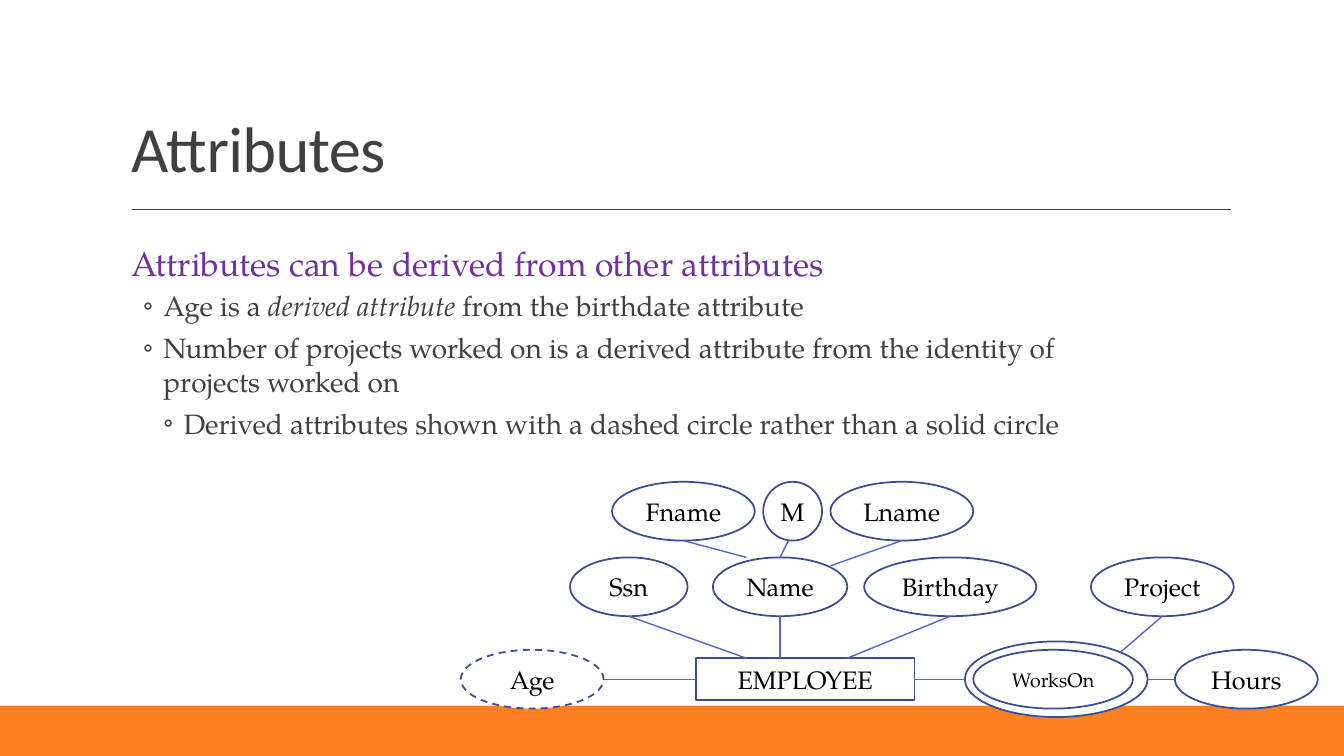
from lxml.etree import SubElement
from pptx import Presentation
from pptx.dml.color import RGBColor
from pptx.enum.dml import MSO_LINE
from pptx.enum.shapes import MSO_CONNECTOR, MSO_SHAPE
from pptx.enum.text import MSO_ANCHOR, MSO_AUTO_SIZE, PP_ALIGN
from pptx.oxml.ns import qn
from pptx.util import Inches, Pt

COLORS = {"band": "FF8021", "text": "404040", "lead": "7030A0", "node": "FFFFFF",
          "outline": "3A4C94", "link": "4E67C8", "label": "000000"}
HEAD_FONT, BODY_FONT = "Calibri", "TeX Gyre Pagella"

# The diagram sits on a grid of twelfths of an inch.
UNIT = 1 / 12
LEFT, TOP = 4.57, 4.78

# label: (column, row, columns wide)
ATTRIBUTES = {
    "Ssn": (13, 9, 14), "Birthday": (48, 9, 20.5), "Name": (30, 9, 16),
    "Fname": (18, 0, 17), "Lname": (44, 0, 17), "M": (36, 0, 7),
    "Project": (75, 9, 17), "Hours": (85, 20, 17), "Age": (0, 20, 17),
}
LINKS = [
    ((20, 16), (34, 21)), ((38, 16), (38, 21)), ((58.25, 16), (46, 21)),
    ((26.5, 7), (34, 9)), ((39, 7), (38, 9)), ((52.5, 7), (44, 10)),
    ((60, 23.5), (54, 23.5)), ((83.5, 16), (78.5, 20.3)),
    ((81.75, 23.5), (85, 23.5)), ((17, 23.5), (28, 23.5)),
]
# (level, runs as (text, italic))
BODY = [
    (0, [("Attributes can be derived from other attributes", False)]),
    (1, [("Age is a ", False), ("derived attribute", True),
         (" from the birthdate attribute", False)]),
    (1, [("Number of projects worked on is a derived attribute "
          "from the identity of projects worked on", False)]),
    (2, [("Derived attributes shown with a dashed circle "
          "rather than a solid circle", False)]),
]


def rgb(name):
    return RGBColor.from_string(COLORS[name])


def grid_x(col):
    return Inches(LEFT + col * UNIT)


def grid_y(row):
    return Inches(TOP + row * UNIT)


def add_run(p, text, size, color, font=BODY_FONT, italic=False):
    r = p.add_run()
    r.text = text
    r.font.name, r.font.size, r.font.italic = font, Pt(size), italic
    r.font.color.rgb = rgb(color)
    return r


def place(sp, left, top, width, height):
    sp.left, sp.top = Inches(left), Inches(top)
    sp.width, sp.height = Inches(width), Inches(height)


def add_line(slide, x1, y1, x2, y2, color):
    line = slide.shapes.add_connector(MSO_CONNECTOR.STRAIGHT, x1, y1, x2, y2)
    line.line.color.rgb, line.line.width = rgb(color), Pt(1)
    SubElement(line._element.spPr, qn("a:effectLst"))


def add_node(slide, label, col, row, cols, rows=7, kind=MSO_SHAPE.OVAL, size=18):
    sp = slide.shapes.add_shape(kind, grid_x(col), grid_y(row),
                                Inches(cols * UNIT), Inches(rows * UNIT))
    sp.shadow.inherit = False
    sp.fill.solid()
    sp.fill.fore_color.rgb = rgb("node")
    sp.line.color.rgb, sp.line.width = rgb("outline"), Pt(1.25)
    if label:
        tf = sp.text_frame
        tf.word_wrap = False
        tf.vertical_anchor = MSO_ANCHOR.MIDDLE
        tf.margin_left = tf.margin_right = tf.margin_top = tf.margin_bottom = 0
        p = tf.paragraphs[0]
        p.alignment = PP_ALIGN.CENTER
        add_run(p, label, size, "label")
    return sp


def add_backdrop(slide, prs):
    width, height = prs.slide_width, prs.slide_height
    band = slide.shapes.add_shape(MSO_SHAPE.RECTANGLE, 0, Inches(7),
                                  width, height - Inches(7))
    band.shadow.inherit = False
    band.fill.solid()
    band.fill.fore_color.rgb = rgb("band")
    band.line.fill.background()
    add_line(slide, Inches(1.31), Inches(2.08), Inches(12.21), Inches(2.08), "text")


def fill_title(sp, text):
    place(sp, 1.2, 0.31, 11, 1.59)
    tf = sp.text_frame
    tf.auto_size = MSO_AUTO_SIZE.NONE
    tf.vertical_anchor = MSO_ANCHOR.BOTTOM
    p = tf.paragraphs[0]
    p.alignment, p.line_spacing = PP_ALIGN.LEFT, 0.9
    r = add_run(p, text, 46, "text", HEAD_FONT)
    r.font._element.set("spc", "-50")


def set_bullet(p, level):
    """Indent a paragraph by its level; only the lower levels get a bullet."""
    pPr = p._p.get_or_add_pPr()
    margin, hang = (0.22 + 0.2 * level, -0.2) if level else (0.1, 0)
    pPr.set("marL", str(Inches(margin)))
    pPr.set("indent", str(Inches(hang)))
    if level:
        SubElement(pPr, qn("a:buFont"), typeface=HEAD_FONT)
        SubElement(pPr, qn("a:buChar"), char="◦")
    else:
        SubElement(pPr, qn("a:buNone"))


def fill_body(sp):
    place(sp, 1.2, 2.32, 9.97, 4.38)
    tf = sp.text_frame
    tf.auto_size = MSO_AUTO_SIZE.NONE
    tf.vertical_anchor = MSO_ANCHOR.TOP
    tf.margin_left = tf.margin_right = 0
    for i, (level, runs) in enumerate(BODY):
        p = tf.add_paragraph() if i else tf.paragraphs[0]
        p.level = level
        p.line_spacing = 1.0 if level else 1.1
        p.space_before, p.space_after = (Pt(2), Pt(4)) if level else (Pt(12), Pt(2))
        set_bullet(p, level)
        size, color = (20, "text") if level else (24, "lead")
        for text, italic in runs:
            add_run(p, text, size, color, italic=italic)


def add_diagram(slide):
    add_node(slide, "EMPLOYEE", 28, 21, 26, 5, MSO_SHAPE.RECTANGLE)
    nodes = {label: add_node(slide, label, *cell) for label, cell in ATTRIBUTES.items()}
    nodes["Age"].line.dash_style = MSO_LINE.DASH
    add_node(slide, "", 60, 19, 21.75, 9)
    add_node(slide, "WorksOn", 61, 20, 19, size=14)
    for (c1, r1), (c2, r2) in LINKS:
        add_line(slide, grid_x(c1), grid_y(r1), grid_x(c2), grid_y(r2), "link")


def main():
    prs = Presentation()
    prs.slide_width, prs.slide_height = Inches(13.33), Inches(7.5)
    slide = prs.slides.add_slide(prs.slide_layouts[1])
    add_backdrop(slide, prs)
    fill_title(slide.shapes.title, "Attributes")
    fill_body(slide.placeholders[1])
    add_diagram(slide)
    prs.save("out.pptx")


if __name__ == "__main__":
    main()
